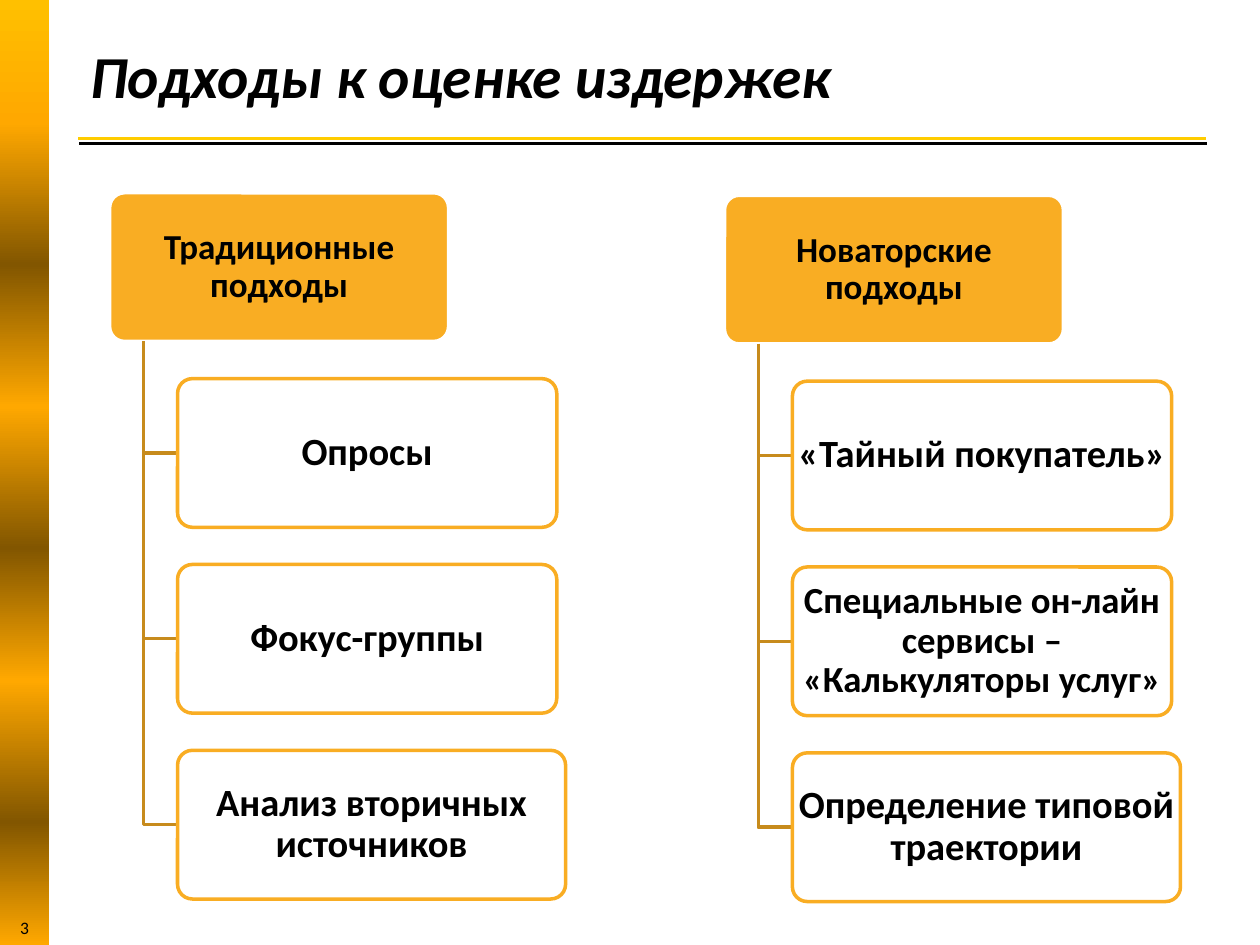
from lxml import etree
from pptx import Presentation
from pptx import util as u
from pptx.dml.color import RGBColor
from pptx.enum import shapes, text
from pptx.oxml import parse_xml
from pptx.oxml.ns import nsdecls, qn

COLORS = {
    "black": "000000", "white": "FFFFFF", "yellow": "FFCC00", "gold": "FFC000",
    "amber": "FFA800", "brown": "825600", "orange": "F9AD23", "branch": "C78B1C",
}
BAND_STOPS = [(0, "gold"), (13, "amber"), (28, "brown"), (43, "amber"),
              (58, "brown"), (72, "amber"), (87, "brown"), (100, "amber")]
BOX_HEIGHT = 1.18
ROW_STEP = BOX_HEIGHT * 1.25
HEADER_WIDTH = 2.69
BRANCH_INDENT = 0.27
APPROACHES = [
    (0.87, 1.53, "Традиционные подходы",
     [("Опросы", 3.01, 22), ("Фокус-группы", 3.01, 22),
      ("Анализ вторичных источников", 3.08, 22)]),
    (5.75, 1.55, "Новаторские подходы",
     [("«Тайный покупатель»", 3.01, 22),
      ("Специальные он-лайн сервисы – «Калькуляторы услуг»", 3.01, 21),
      ("Определение типовой траектории", 3.08, 22)]),
]


def color(name):
    """Return the named palette colour."""
    return RGBColor.from_string(COLORS[name])


def set_line(shape, name, width):
    """Give a shape or connector a solid line."""
    shape.line.color.rgb = color(name)
    shape.line.width = u.Pt(width)


def write(shape, content, size, align=None, spacing=None, bold=False, italic=False):
    """Put one formatted paragraph into a shape and return its run."""
    frame = shape.text_frame
    frame.word_wrap = True
    frame.vertical_anchor = text.MSO_ANCHOR.MIDDLE
    paragraph = frame.paragraphs[0]
    paragraph.alignment = align
    paragraph.line_spacing = spacing
    run = paragraph.add_run()
    run.text = content
    font = paragraph.font
    font.name, font.size, font.bold, font.italic = "Calibri", u.Pt(size), bold, italic
    font.color.rgb = color("black")
    return run


def add_rule(slide, left, top, name):
    """Draw one horizontal line under the title."""
    rule = slide.shapes.add_connector(
        shapes.MSO_CONNECTOR.STRAIGHT, u.Inches(left), u.Inches(top),
        u.Inches(left + 8.95), u.Inches(top))
    set_line(rule, name, 1.75)
    etree.SubElement(rule.line._get_or_add_ln().getparent(), qn("a:effectLst"))


def add_band(slide):
    """Draw the gradient band along the left edge."""
    band = slide.shapes.add_shape(
        shapes.MSO_SHAPE.RECTANGLE, 0, 0, u.Inches(0.39), u.Inches(7.5))
    band.shadow.inherit = False
    band.line.fill.background()
    band.fill.gradient()
    band.fill.gradient_angle = 270
    stops = band.fill._fill._gradFill.find(qn("a:gsLst"))
    for stop in list(stops):
        stops.remove(stop)
    for position, name in BAND_STOPS:
        stop = etree.SubElement(stops, qn("a:gs"), pos=str(position * 1000))
        etree.SubElement(stop, qn("a:srgbClr"), val=COLORS[name])


def add_title(slide):
    """Add the title with its soft text shadow."""
    title = slide.shapes.add_textbox(
        u.Inches(0.62), u.Inches(0.16), u.Inches(6.72), u.Inches(0.94))
    run = write(title, "Подходы к оценке издержек", 34,
                spacing=u.Pt(35), bold=True, italic=True)
    run.font._element.append(parse_xml(
        f'<a:effectLst {nsdecls("a")}><a:outerShdw blurRad="38100" dist="38100" '
        f'dir="2700000"><a:srgbClr val="{COLORS["black"]}"><a:alpha val="43000"/>'
        '</a:srgbClr></a:outerShdw></a:effectLst>'))


def add_number(slide):
    """Add the slide number at the foot of the band."""
    number = slide.shapes.add_textbox(
        0, u.Inches(7.23), u.Inches(0.39), u.Inches(0.27))
    write(number, "3", 10, text.PP_ALIGN.CENTER)


def add_box(slide, left, top, width, content, size, fill, line):
    """Add one rounded box with centred bold text."""
    box = slide.shapes.add_shape(
        shapes.MSO_SHAPE.ROUNDED_RECTANGLE, u.Inches(left), u.Inches(top),
        u.Inches(width), u.Inches(BOX_HEIGHT))
    box.adjustments[0] = 0.1
    box.shadow.inherit = False
    box.fill.solid()
    box.fill.fore_color.rgb = color(fill)
    set_line(box, line, 2)
    frame = box.text_frame
    frame.margin_left = frame.margin_right = u.Inches(0.01)
    frame.margin_top = frame.margin_bottom = 0
    write(box, content, size, text.PP_ALIGN.CENTER, 0.9, bold=True)
    return box


def add_branch(slide, left, top, bottom):
    """Draw an elbow from the header down to a box."""
    x, y, end = u.Inches(left), u.Inches(top), u.Inches(bottom)
    builder = slide.shapes.build_freeform(x, y)
    builder.add_line_segments(
        [(x, end), (u.Inches(left + BRANCH_INDENT), end)], close=False)
    branch = builder.convert_to_shape()
    branch.shadow.inherit = False
    branch.fill.background()
    set_line(branch, "branch", 2)


def add_approach(slide, left, top, heading, items):
    """Add a header with its column of branched boxes."""
    add_box(slide, left, top, HEADER_WIDTH, heading, 20, "orange", "white")
    trunk = left + HEADER_WIDTH / 10
    for row, (content, width, size) in enumerate(items, 1):
        box_top = top + row * ROW_STEP
        add_branch(slide, trunk, top + BOX_HEIGHT, box_top + BOX_HEIGHT / 2)
        box = add_box(slide, trunk + BRANCH_INDENT, box_top, width,
                      content, size, "white", "orange")
        fill_color = box.fill._xPr.find(qn("a:solidFill"))[0]
        etree.SubElement(fill_color, qn("a:alpha"), val="90000")


def main():
    """Build and save the slide."""
    presentation = Presentation()
    presentation.slide_width = u.Inches(10)
    presentation.slide_height = u.Inches(7.5)
    slide = presentation.slides.add_slide(presentation.slide_layouts[6])
    add_rule(slide, 0.63, 1.14, "black")
    add_rule(slide, 0.62, 1.1, "yellow")
    add_band(slide)
    add_number(slide)
    add_title(slide)
    for approach in APPROACHES:
        add_approach(slide, *approach)
    presentation.save("out.pptx")


if __name__ == "__main__":
    main()
